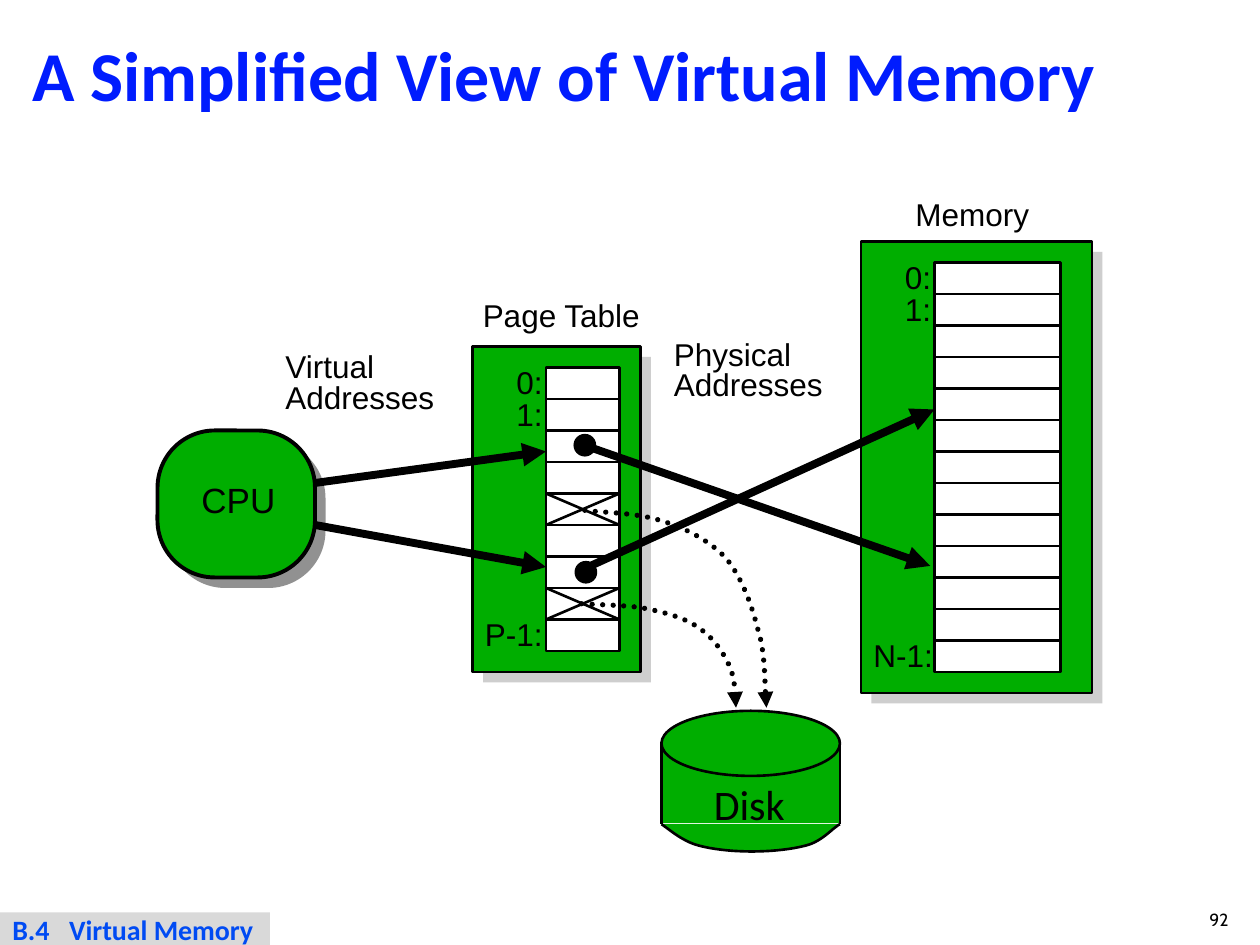
from lxml.etree import SubElement
from pptx import Presentation
from pptx.dml.color import RGBColor
from pptx.enum.dml import MSO_LINE
from pptx.enum.shapes import MSO_CONNECTOR, MSO_SHAPE
from pptx.enum.text import MSO_ANCHOR
from pptx.oxml.ns import qn
from pptx.util import Pt

PX = 7620  # 120 px to the inch
BLACK = RGBColor(0x00, 0x00, 0x00)
WHITE = RGBColor(0xFF, 0xFF, 0xFF)
GREEN = RGBColor(0x00, 0xAE, 0x00)
DARK_SHADOW = RGBColor(0x91, 0x91, 0x91)
LIGHT_SHADOW = RGBColor(0xCE, 0xCE, 0xCE)
BANNER_GRAY = RGBColor(0xD9, 0xD9, 0xD9)
TITLE_BLUE = RGBColor(0x00, 0x1C, 0xFE)
BANNER_BLUE = RGBColor(0x00, 0x4B, 0xF3)

prs = Presentation()
prs.slide_width, prs.slide_height = 1200 * PX, 900 * PX
slide = prs.slides.add_slide(prs.slide_layouts[6])
shapes = slide.shapes


def block(left, top, width, height, fill, line=1.5, kind=MSO_SHAPE.RECTANGLE):
    """Add a filled shape; a line width of 0 means no outline."""
    shape = shapes.add_shape(kind, left * PX, top * PX, width * PX, height * PX)
    shape.shadow.inherit = False
    shape.fill.solid()
    shape.fill.fore_color.rgb = fill
    if line:
        shape.line.color.rgb = BLACK
        shape.line.width = Pt(line)
    else:
        shape.line.fill.background()
    return shape


def label(text, left, top, width, height=48, size=18, font="Arial", color=BLACK,
          bold=False, spacing=None, wrap=False, anchor=MSO_ANCHOR.TOP, tab=None):
    box = shapes.add_textbox(left * PX, top * PX, width * PX, height * PX)
    frame = box.text_frame
    frame.word_wrap = wrap
    frame.vertical_anchor = anchor
    frame.text = text
    for paragraph in frame.paragraphs:
        if tab:
            stops = SubElement(paragraph._p.get_or_add_pPr(), qn("a:tabLst"))
            SubElement(stops, qn("a:tab"), pos=str(tab * PX), algn="l")
        if spacing:
            paragraph.line_spacing = spacing
        for run in paragraph.runs:
            run.font.size = Pt(size)
            run.font.name = font
            run.font.bold = bold
            run.font.color.rgb = color


label("A Simplified View of Virtual Memory", 19, 18, 1162, 116, size=40,
      font="Calibri", color=TITLE_BLUE, bold=True, spacing=0.87, wrap=True,
      anchor=MSO_ANCHOR.MIDDLE)
label("92", 1140, 860, 60, 40, size=10, font="Cabin", wrap=True)

# CPU
for left, top, fill, line in [(160, 420, DARK_SHADOW, 0), (150, 410, GREEN, 2.25)]:
    cpu = block(left, top, 150, 140, fill, line, MSO_SHAPE.ROUNDED_RECTANGLE)
    cpu.adjustments[0] = 0.39
label("CPU", 180, 450, 95, 52, size=20)

# Memory and page table: panel, cell left offset, cell width, cell count
ROW = 30
for left, top, width, height, cell_dx, cell_width, count in [
    (820, 230, 220, 430, 70, 120, 13),
    (450, 330, 160, 310, 70, 70, 9),
]:
    block(left + 10, top + 10, width, height, LIGHT_SHADOW, 0)
    block(left, top, width, height, GREEN)
    for row in range(count):
        block(left + cell_dx, top + 20 + row * ROW, cell_width, ROW, WHITE)
    for row in range(2):
        label(f"{row}:", left + 30, top + 10 + row * ROW, 49)
label("N-1:", 820, 600, 82)
label("P-1:", 450, 580, 79)
label("Memory", 860, 180, 133)
label("Page Table", 448, 276, 175)
label("Virtual\nAddresses", 260, 332, 167, 70, spacing=0.8)
label("Physical\nAddresses", 630, 320, 167, 70, spacing=0.8)

for left, top in [(547, 414), (548, 535)]:
    block(left, top, 20, 20, BLACK, 1, MSO_SHAPE.OVAL)

# Disk body and top
block(630, 707, 170, 77, GREEN, 0)
block(630, 677, 170, 62, GREEN, kind=MSO_SHAPE.OVAL)

# Straight lines: address arrows, crosses of the paged-out rows, disk sides
ARROW, THIN = 4.5, 1.5
segments = [
    (300, 460, 520, 430, ARROW),
    (559, 425, 886, 539, ARROW),
    (560, 540, 890, 390, ARROW),
    (300, 500, 520, 540, ARROW),
]
for row in (4, 7):
    top = 350 + row * ROW
    segments += [(520, top + ROW, 590, top, THIN), (590, top + ROW, 520, top, THIN)]
segments += [(x, 707, x, 785, THIN) for x in (630, 800)]

arrows = []
for x1, y1, x2, y2, weight in segments:
    link = shapes.add_connector(MSO_CONNECTOR.STRAIGHT, x1 * PX, y1 * PX, x2 * PX, y2 * PX)
    link.line.color.rgb = BLACK
    link.line.width = Pt(weight)
    SubElement(link._element.spPr, qn("a:effectLst"))
    if weight == ARROW:
        arrows.append(link)

# Bezier curves: disk bottom, then the dotted paths to the disk
STEPS = 10
disk_bottom = [(630, 785), (635, 788), (647, 799), (661, 804), (676, 809), (698, 811),
               (716, 811), (734, 811), (757, 809), (772, 804), (785, 799), (794, 788),
               (800, 785)]
upper_path = [(557, 486), (569, 488), (607, 488), (630, 496), (653, 503), (674, 514),
              (690, 530), (706, 548), (716, 576), (722, 600), (730, 624), (728, 659),
              (730, 674)]
lower_path = [(554, 575), (565, 576), (599, 576), (617, 580), (636, 584), (654, 589),
              (667, 599), (680, 608), (690, 623), (695, 635), (701, 648), (700, 666),
              (701, 674)]
for points in (disk_bottom, upper_path, lower_path):
    outline = []
    for i in range(0, len(points) - 1, 3):
        for step in range(1, STEPS + 1):
            t = step / STEPS
            weights = ((1 - t) ** 3, 3 * t * (1 - t) ** 2, 3 * t * t * (1 - t), t ** 3)
            outline.append(tuple(
                sum(w * p[axis] for w, p in zip(weights, points[i:i + 4])) * PX
                for axis in (0, 1)))
    builder = shapes.build_freeform(points[0][0] * PX, points[0][1] * PX)
    builder.add_line_segments(outline, close=False)
    curve = builder.convert_to_shape()
    curve.shadow.inherit = False
    curve.line.color.rgb = BLACK
    if points is disk_bottom:
        curve.fill.solid()
        curve.fill.fore_color.rgb = GREEN
        curve.line.width = Pt(THIN)
    else:
        curve.fill.background()
        curve.line.width = Pt(3)
        curve.line.dash_style = MSO_LINE.ROUND_DOT
        curve._element.spPr.find(qn("a:ln")).set("cap", "rnd")
        arrows.append(curve)

for arrow in arrows:
    SubElement(arrow._element.spPr.find(qn("a:ln")), qn("a:tailEnd"), type="triangle")

label("Disk", 668, 736, 92, 60, size=24, font="Calibri")

block(0, 869, 257, 32, BANNER_GRAY, 0)
label("B.4\tVirtual Memory", 0, 869, 257, 32, size=16, font="Calibri",
      color=BANNER_BLUE, bold=True, wrap=True, anchor=MSO_ANCHOR.MIDDLE, tab=54)

prs.save("out.pptx")
